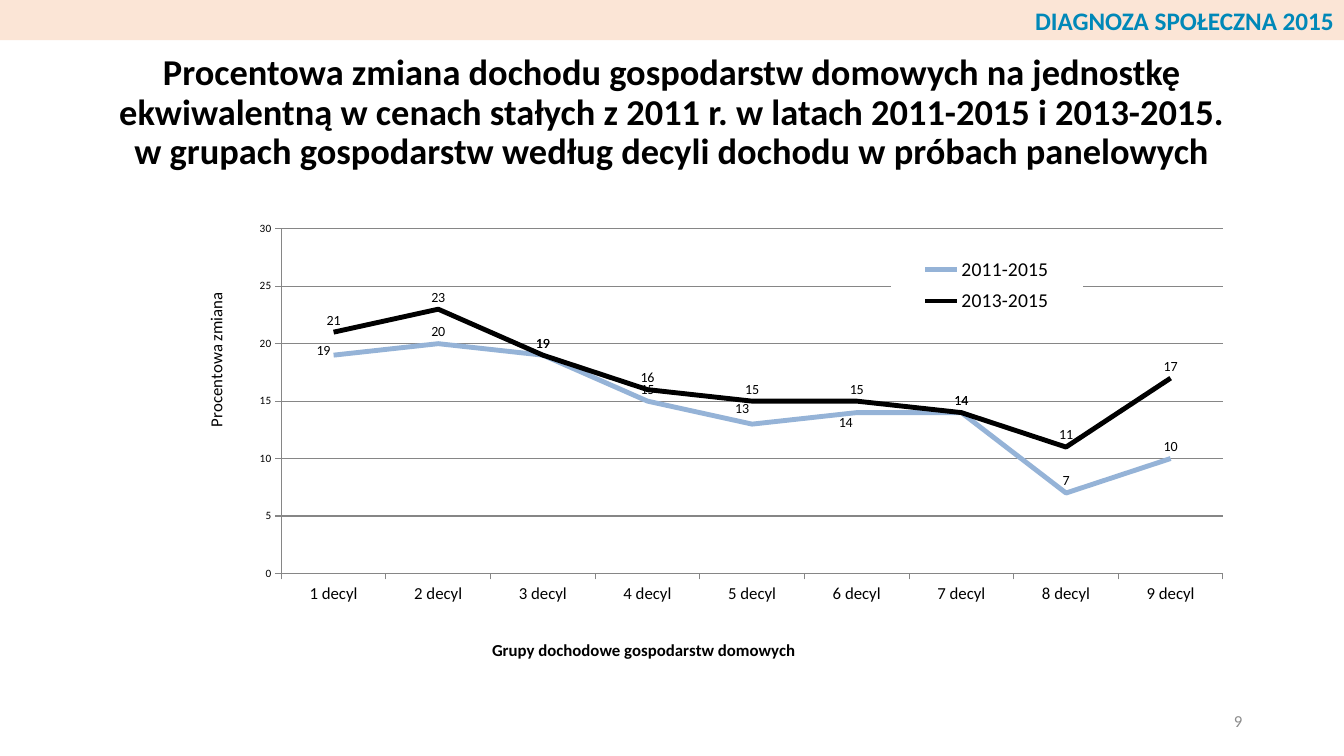
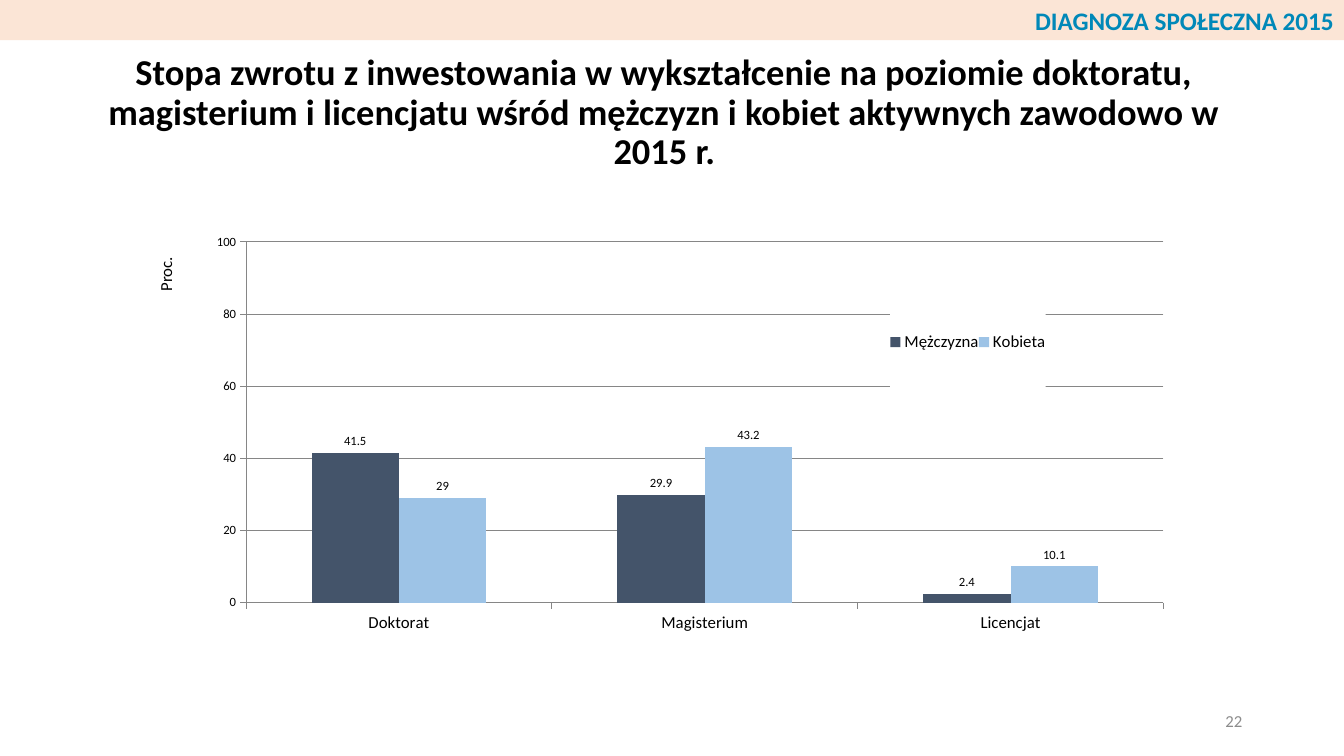
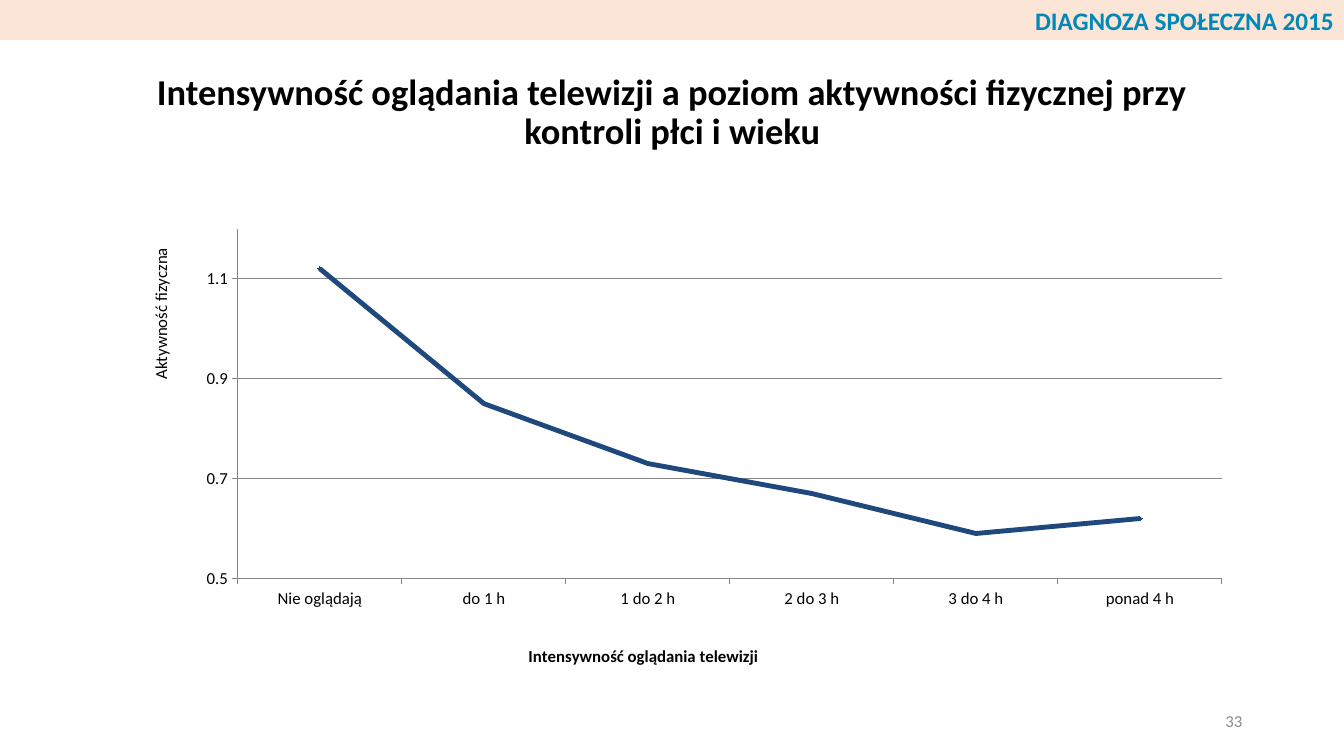
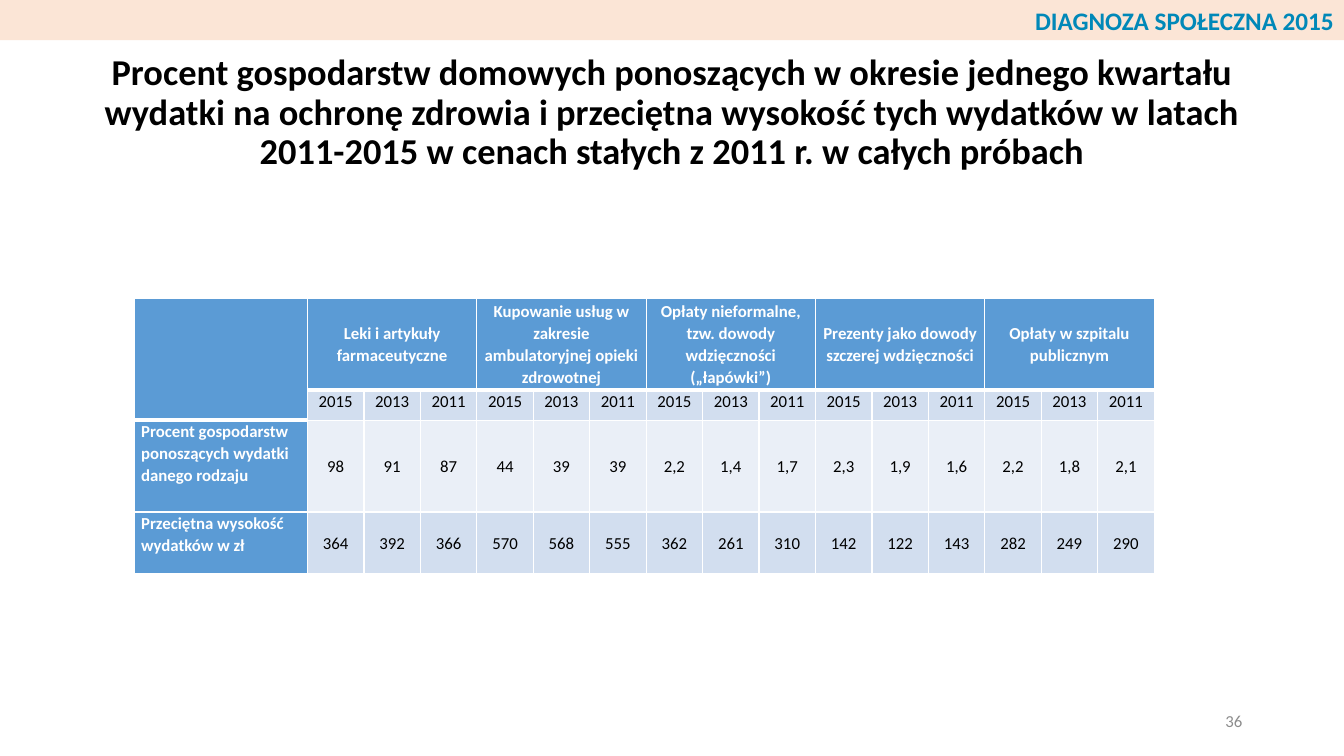
from lxml import etree
from pptx import Presentation
from pptx.chart.data import CategoryChartData
from pptx.dml.color import RGBColor
from pptx.enum.chart import XL_CHART_TYPE, XL_LABEL_POSITION, XL_LEGEND_POSITION
from pptx.enum.chart import XL_MARKER_STYLE, XL_TICK_LABEL_POSITION, XL_TICK_MARK
from pptx.enum.shapes import MSO_SHAPE
from pptx.enum.text import MSO_ANCHOR, PP_ALIGN
from pptx.oxml.ns import qn
from pptx.util import Pt

PX = 9144
FONT = "Calibri"
BLACK = RGBColor(0x00, 0x00, 0x00)
WHITE = RGBColor(0xFF, 0xFF, 0xFF)
GREY = RGBColor(0x8C, 0x8C, 0x8C)
AXIS_GREY = RGBColor(0x86, 0x86, 0x86)
PEACH = RGBColor(0xFB, 0xE5, 0xD6)
TEAL = RGBColor(0x00, 0x88, 0xB8)
LIGHT_BLUE = RGBColor(0x95, 0xB3, 0xD7)
SKY = RGBColor(0x9D, 0xC3, 0xE6)
SLATE = RGBColor(0x44, 0x54, 0x6A)
NAVY = RGBColor(0x1F, 0x49, 0x7D)
HEADER_BLUE = RGBColor(0x5B, 0x9B, 0xD5)
ROW_DARK = RGBColor(0xD2, 0xDE, 0xEF)
ROW_LIGHT = RGBColor(0xEA, 0xEF, 0xF7)
LEFT, CENTER, RIGHT = PP_ALIGN.LEFT, PP_ALIGN.CENTER, PP_ALIGN.RIGHT
TOP, MIDDLE = MSO_ANCHOR.TOP, MSO_ANCHOR.MIDDLE
LINE, LINE_MARKERS = XL_CHART_TYPE.LINE, XL_CHART_TYPE.LINE_MARKERS
COLUMN = XL_CHART_TYPE.COLUMN_CLUSTERED
ABOVE, OUTSIDE_END = XL_LABEL_POSITION.ABOVE, XL_LABEL_POSITION.OUTSIDE_END
LEGEND_RIGHT = XL_LEGEND_POSITION.RIGHT
DIAMOND, NO_MARKER = XL_MARKER_STYLE.DIAMOND, XL_MARKER_STYLE.NONE
LOW = XL_TICK_LABEL_POSITION.LOW
TICK_OUT, TICK_NONE = XL_TICK_MARK.OUTSIDE, XL_TICK_MARK.NONE
CHART_BOX = (92, 200, 1150, 476)


def px(*lengths):
    """Turn px lengths into EMU."""
    return [n * PX for n in lengths]


def set_font(font, size, color=BLACK, bold=False):
    """Format one font."""
    font.name, font.size, font.bold = FONT, Pt(size), bold
    font.color.rgb = color


def write(tf, text, size=12, color=BLACK, bold=False, align=LEFT, anchor=MIDDLE, spacing=None):
    """Write one formatted paragraph into a text frame."""
    tf.word_wrap = True
    tf.vertical_anchor = anchor
    p = tf.paragraphs[0]
    p.alignment = align
    p.line_spacing = spacing
    r = p.add_run()
    r.text = text
    set_font(r.font, size, color, bold)


def set_layout(parent, x, y, w=None, h=None, index=None, edge=True, inner=False):
    """Place a chart part by px measured inside the chart box."""
    old = parent.find(qn("c:layout"))
    if old is not None:
        parent.remove(old)
    if index is None:
        overlay = parent.find(qn("c:overlay"))
        index = 0 if overlay is None else parent.index(overlay)
    layout = etree.Element(qn("c:layout"))
    manual = etree.SubElement(layout, qn("c:manualLayout"))
    values = {}
    if inner:
        values["layoutTarget"] = "inner"
    if edge:
        values.update(xMode="edge", yMode="edge")
    values.update(x=x / CHART_BOX[2], y=y / CHART_BOX[3])
    if w:
        values.update(w=w / CHART_BOX[2], h=h / CHART_BOX[3])
    for tag, value in values.items():
        etree.SubElement(manual, qn("c:" + tag)).set("val", str(value))
    parent.insert(index, layout)


def set_borders(cell, bottom=1):
    """Draw white borders around a table cell."""
    tcPr = cell._tc.get_or_add_tcPr()
    for side, width in zip("LRTB", (1, 1, 1, bottom)):
        ln = etree.SubElement(tcPr, qn("a:ln" + side), w=str(Pt(width)))
        fill = etree.SubElement(ln, qn("a:solidFill"))
        etree.SubElement(fill, qn("a:srgbClr"), val=str(WHITE))


class Deck:
    """Holds the presentation, its style and the current slide."""

    def __init__(self):
        """Start an empty deck."""
        self.prs = Presentation()
        self.prs.slide_width, self.prs.slide_height = px(1333, 750)
        self.s = None

    def slide(self, title, number, left=92):
        """Add a slide with its title, page number and band."""
        self.s = self.prs.slides.add_slide(self.prs.slide_layouts[5])
        sp = self.s.shapes.title
        sp.left, sp.top, sp.width, sp.height = px(left, 40, 1242 - left, 145)
        write(sp.text_frame, title, size=26, bold=True, align=CENTER, spacing=0.9)
        sp = self.s.shapes.add_textbox(*px(942, 695, 300, 40))
        write(sp.text_frame, str(number), color=GREY, align=RIGHT)
        self.band("DIAGNOZA SPOŁECZNA 2015")

    def band(self, text):
        """Add the top band."""
        sp = self.s.shapes.add_shape(MSO_SHAPE.RECTANGLE, *px(0, 0, 1333, 40))
        sp.shadow.inherit = False
        sp.fill.solid()
        sp.fill.fore_color.rgb = PEACH
        sp.line.fill.background()
        write(sp.text_frame, text, size=18, color=TEAL, bold=True, align=RIGHT)

    def chart(self, kind, cats, series, plot):
        """Add a chart; series holds name, values and colour."""
        data = CategoryChartData()
        data.categories = cats
        for name, values, _ in series:
            data.add_series(name, values)
        chart = self.s.shapes.add_chart(kind, *px(*CHART_BOX), data).chart
        chart.has_title = chart.has_legend = False
        set_font(chart.font, 10)
        chart.plots[0].vary_by_categories = False
        set_layout(chart._chartSpace.chart.plotArea, *plot, inner=True)
        for ser, (_, _, color) in zip(chart.series, series):
            if kind == COLUMN:
                ser.format.fill.solid()
                ser.format.fill.fore_color.rgb = color
            else:
                ser.smooth = False
                ser.marker.style = NO_MARKER
                ser.format.line.color.rgb = color
                ser.format.line.width = Pt(3.5)
        return chart

    def axis(self, axis, size, title=None, at=None, bold=False, upright=False, grid=False,
             low=None, high=None, step=None):
        """Format one axis and place its title."""
        axis.major_tick_mark, axis.minor_tick_mark = TICK_OUT, TICK_NONE
        axis.has_major_gridlines = grid
        lines = [axis.format.line]
        if grid:
            lines.append(axis.major_gridlines.format.line)
            axis.minimum_scale, axis.maximum_scale, axis.major_unit = low, high, step
            axis.tick_labels.number_format = "General"
            axis.tick_labels.number_format_is_linked = False
        else:
            axis.tick_label_position = LOW
        for line in lines:
            line.color.rgb, line.width = AXIS_GREY, Pt(0.75)
        set_font(axis.tick_labels.font, size)
        if title:
            tf = axis.axis_title.text_frame
            r = tf.paragraphs[0].add_run()
            r.text = title
            set_font(r.font, 12, bold=bold)
            element = axis.axis_title._element
            if upright:
                body = element.find(".//" + qn("a:bodyPr"))
                body.set("rot", "-5400000")
                body.set("vert", "horz")
            set_layout(element, *at)

    def legend(self, chart, size, box):
        """Add a white legend over the plot."""
        chart.has_legend = True
        legend = chart.legend
        legend.position = LEGEND_RIGHT
        legend.include_in_layout = False
        set_font(legend.font, size)
        element = legend._element
        set_layout(element, *box)
        spPr = etree.Element(qn("c:spPr"))
        fill = etree.SubElement(spPr, qn("a:solidFill"))
        etree.SubElement(fill, qn("a:srgbClr"), val=str(WHITE))
        element.find(qn("c:overlay")).addnext(spPr)

    def labels(self, ser, size, position, moved=()):
        """Show values on a series, with some labels moved by px."""
        labels = ser.data_labels
        labels.show_value = True
        labels.position = position
        set_font(labels.font, size)
        for i, dx, dy in moved:
            label = ser.points[i].data_label
            set_font(label.font, size)
            label.position = position
            dLbl = ser._element.xpath(f'c:dLbls/c:dLbl[c:idx/@val="{i}"]')[0]
            set_layout(dLbl, dx, dy, index=1, edge=False)

    def cell(self, cell, text, fill, bottom=1, **fmt):
        """Format one table cell."""
        cell.margin_left = cell.margin_right = 7 * PX
        cell.margin_top = cell.margin_bottom = 0
        set_borders(cell, bottom)
        cell.fill.solid()
        cell.fill.fore_color.rgb = fill
        anchor = fmt.pop("anchor", MIDDLE)
        write(cell.text_frame, text, spacing=1.07, **fmt)
        cell.vertical_anchor = anchor

    def table(self, groups, years, rows):
        """Add a table with grouped year columns."""
        span = len(years)
        widths = [172] + [56] * (span * len(groups))
        heights = [91, 27, 91, 61]
        frame = self.s.shapes.add_table(len(heights), len(widths),
                                        *px(133, 296, sum(widths), sum(heights)))
        table = frame.table
        table.horz_banding = False
        for col, width in zip(table.columns, widths):
            col.width = width * PX
        for row, height in zip(table.rows, heights):
            row.height = height * PX
        head = {"fill": HEADER_BLUE, "color": WHITE, "bold": True}
        table.cell(0, 0).merge(table.cell(1, 0))
        for i in range(2):
            self.cell(table.cell(i, 0), "", bottom=3, **head)
        for g, group in enumerate(groups):
            first = 1 + g * span
            table.cell(0, first).merge(table.cell(0, first + span - 1))
            self.cell(table.cell(0, first), group, bottom=3, align=CENTER, **head)
            for j, year in enumerate(years):
                self.cell(table.cell(1, first + j), year, ROW_DARK, align=CENTER, anchor=TOP)
        for i, (name, values, fill) in enumerate(rows, 2):
            self.cell(table.cell(i, 0), name, anchor=TOP, **head)
            for j, value in enumerate(values.split(), 1):
                self.cell(table.cell(i, j), value, fill, align=CENTER)


def income_slide(deck):
    """Build the income change slide."""
    deck.slide("Procentowa zmiana dochodu gospodarstw domowych na jednostkę ekwiwalentną "
               "w cenach stałych z 2011 r. w latach 2011-2015 i 2013-2015. w grupach "
               "gospodarstw według decyli dochodu w próbach panelowych", 9)
    chart = deck.chart(LINE, [f"{n} decyl" for n in range(1, 10)],
                       [("2011-2015", (19, 20, 19, 15, 13, 14, 14, 7, 10), LIGHT_BLUE),
                        ("2013-2015", (21, 23, 19, 16, 15, 15, 14, 11, 17), BLACK)],
                       (187, 27, 934, 342))
    deck.axis(chart.category_axis, 12, "Grupy dochodowe gospodarstw domowych", (393, 431), bold=True)
    deck.axis(chart.value_axis, 8, "Procentowa zmiana", (108, 87), upright=True,
              grid=True, low=0, high=30, step=5)
    deck.legend(chart, 14, (792, 48, 190, 70))
    older, newer = chart.series
    deck.labels(older, 10, ABOVE, [(0, -10, 7), (4, -10, -3), (5, -11, 22)])
    deck.labels(newer, 10, ABOVE)


def education_slide(deck):
    """Build the return on education slide."""
    deck.slide("Stopa zwrotu z inwestowania w wykształcenie na poziomie doktoratu, magisterium "
               "i licencjatu wśród mężczyzn i kobiet aktywnych zawodowo w 2015 r.", 22, left=76)
    chart = deck.chart(COLUMN, ["Doktorat", "Magisterium", "Licencjat"],
                       [("Mężczyzna", (41.5, 29.9, 2.4), SLATE),
                        ("Kobieta", (29, 43.2, 10.1), SKY)],
                       (152, 40, 910, 358))
    chart.plots[0].gap_width, chart.plots[0].overlap = 150, 0
    deck.axis(chart.category_axis, 12)
    deck.axis(chart.value_axis, 9, "Proc. ", (58, 48), upright=True,
              grid=True, low=0, high=100, step=20)
    deck.legend(chart, 12, (791, 92, 154, 95))
    for ser in chart.series:
        deck.labels(ser, 9, OUTSIDE_END)


def television_slide(deck):
    """Build the television and activity slide."""
    deck.slide("Intensywność oglądania telewizji a poziom aktywności fizycznej "
               "przy kontroli płci i wieku", 33)
    chart = deck.chart(LINE_MARKERS,
                       ["Nie oglądają", "do 1 h", "1 do 2 h", "2 do 3 h", "3 do 4 h", "ponad 4 h"],
                       [("Series 1", (1.12, 0.85, 0.73, 0.67, 0.59, 0.62), NAVY)],
                       (144, 27, 976, 347))
    marker = chart.series[0].marker
    marker.style, marker.size = DIAMOND, 3
    marker.format.fill.solid()
    marker.format.fill.fore_color.rgb = BLACK
    deck.axis(chart.category_axis, 12, "Intensywność oglądania telewizji ", (429, 437), bold=True)
    deck.axis(chart.value_axis, 12, "Aktywność fizyczna", (53, 43), upright=True,
              grid=True, low=0.5, high=1.2, step=0.2)


def health_slide(deck):
    """Build the health spending slide."""
    deck.slide("Procent gospodarstw domowych ponoszących w okresie jednego kwartału wydatki na "
               "ochronę zdrowia i przeciętna wysokość tych wydatków w latach 2011-2015 "
               "w cenach stałych z 2011 r. w całych próbach", 36)
    deck.table(["Leki i artykuły farmaceutyczne",
                "Kupowanie usług w zakresie ambulatoryjnej opieki zdrowotnej",
                "Opłaty nieformalne, tzw. dowody wdzięczności („łapówki”)",
                "Prezenty jako dowody szczerej wdzięczności",
                "Opłaty w szpitalu publicznym"],
               ["2015", "2013", "2011"],
               [("Procent gospodarstw ponoszących wydatki danego rodzaju",
                 "98 91 87 44 39 39 2,2 1,4 1,7 2,3 1,9 1,6 2,2 1,8 2,1", ROW_LIGHT),
                ("Przeciętna wysokość wydatków w zł",
                 "364 392 366 570 568 555 362 261 310 142 122 143 282 249 290", ROW_DARK)])


def main():
    """Build and save the deck."""
    deck = Deck()
    for build in (income_slide, education_slide, television_slide, health_slide):
        build(deck)
    deck.prs.save("out.pptx")


if __name__ == "__main__":
    main()
